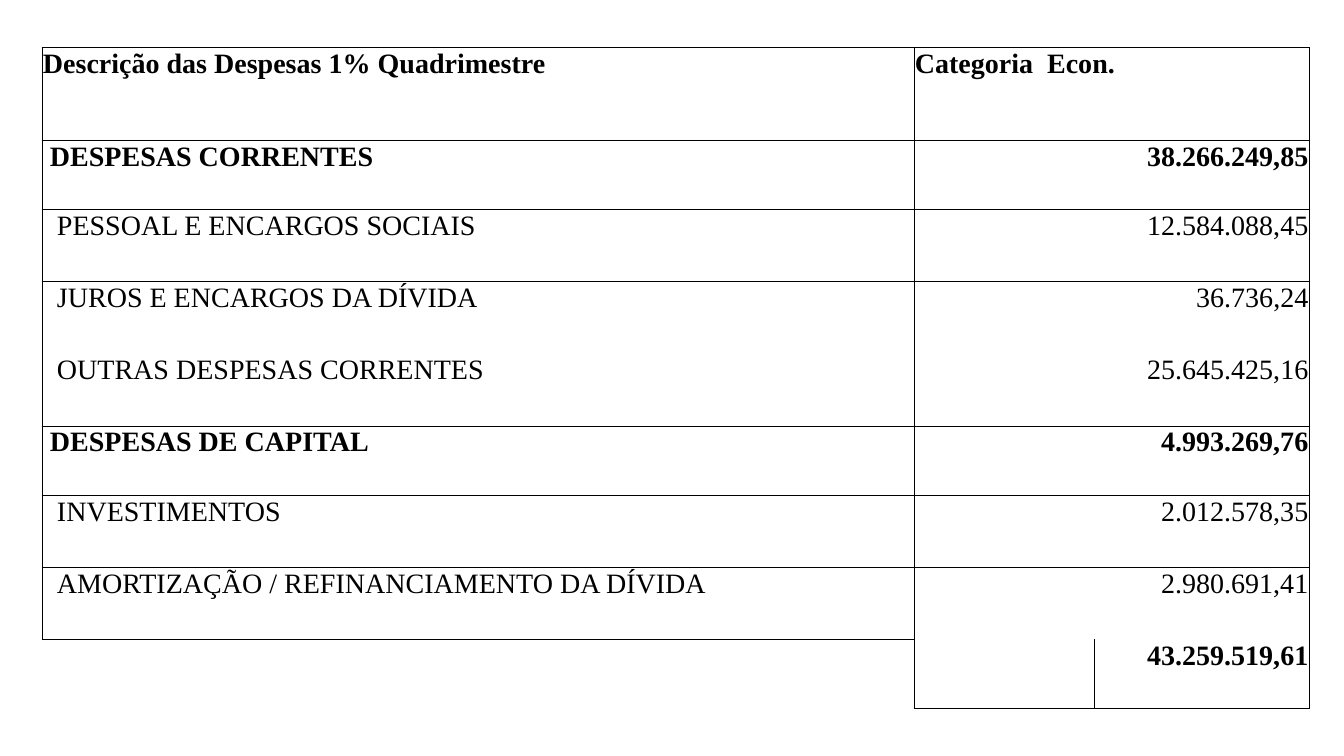
from lxml import etree
from pptx import Presentation
from pptx.dml.color import RGBColor
from pptx.enum import text
from pptx.oxml import ns
from pptx.util import Pt

PLAIN = "{2D5ABB26-0587-4C30-8999-92F81FD0307C}"
BLACK = "000000"


def write(cell, words, bold=False, right=False, indent=0):
    cell.margin_left = Pt(0.7 + indent)
    cell.margin_right = cell.margin_top = Pt(0.7)
    cell.margin_bottom = 0
    par = cell.text_frame.paragraphs[0]
    par.alignment = text.PP_ALIGN.RIGHT if right else text.PP_ALIGN.LEFT
    run = par.add_run()
    run.text = words
    run.font.name, run.font.size, run.font.bold = "Times New Roman", Pt(20), bold
    run.font.color.rgb = RGBColor.from_string(BLACK)


def border(cell, sides):
    """Draw a thin line on each side named in sides, as letters L, R, T, B."""
    props = cell._tc.get_or_add_tcPr()
    for side in "LRTB":
        if side in sides:
            line = etree.SubElement(props, ns.qn(f"a:ln{side}"), w=str(Pt(0.5)))
            fill = etree.SubElement(line, ns.qn("a:solidFill"))
            etree.SubElement(fill, ns.qn("a:srgbClr"), val=BLACK)
    cell.fill.background()


# label, value, bold, indent, sides of the label, sides of the value
rows = [
    ("Descrição das Despesas 1% Quadrimestre", "Categoria  Econ.", True, 0, "LRTB", "LRTB"),
    ("DESPESAS CORRENTES", "38.266.249,85", True, 5, "LRTB", "LRTB"),
    ("PESSOAL E ENCARGOS SOCIAIS", "12.584.088,45", False, 10, "LRT", "LRT"),
    ("JUROS E ENCARGOS DA DÍVIDA", "36.736,24", False, 10, "LR", "LR"),
    ("OUTRAS DESPESAS CORRENTES", "25.645.425,16", False, 10, "LRB", "LRB"),
    ("DESPESAS DE CAPITAL", "4.993.269,76", True, 5, "LRTB", "LRTB"),
    ("INVESTIMENTOS", "2.012.578,35", False, 10, "LRT", "LRT"),
    ("AMORTIZAÇÃO / REFINANCIAMENTO DA DÍVIDA", "2.980.691,41", False, 10, "LRB", "LR"),
]
total = "43.259.519,61"
widths = [622.8, 128.9, 153.6]
heights = [66.4, 49.5, 51.5, 51.5, 51.5, 49.5, 51.5, 51.5, 49.5]

deck = Presentation()
deck.slide_width, deck.slide_height = Pt(960), Pt(540)
slide = deck.slides.add_slide(deck.slide_layouts[6])

frame = slide.shapes.add_table(len(heights), len(widths), Pt(30), Pt(33.9),
                               Pt(sum(widths)), Pt(sum(heights)))
table = frame.table
table.first_row = table.horz_banding = False
table._tbl.tblPr.find(ns.qn("a:tableStyleId")).text = PLAIN
for col, width in zip(table.columns, widths):
    col.width = Pt(width)
for row, height in zip(table.rows, heights):
    row.height = Pt(height)

for i, (label, value, bold, indent, left, right) in enumerate(rows):
    name, sum_cell, rest = table.rows[i].cells
    sum_cell.merge(rest)
    write(name, label, bold=bold, indent=indent)
    write(sum_cell, value, bold=bold, right=i > 0)
    border(name, left)
    border(sum_cell, right)
    border(rest, right.replace("L", ""))

blank, start, end = table.rows[len(rows)].cells
write(end, total, bold=True, right=True)
for cell, sides in ((blank, "RT"), (start, "LB"), (end, "RB")):
    border(cell, sides)

deck.save("out.pptx")
